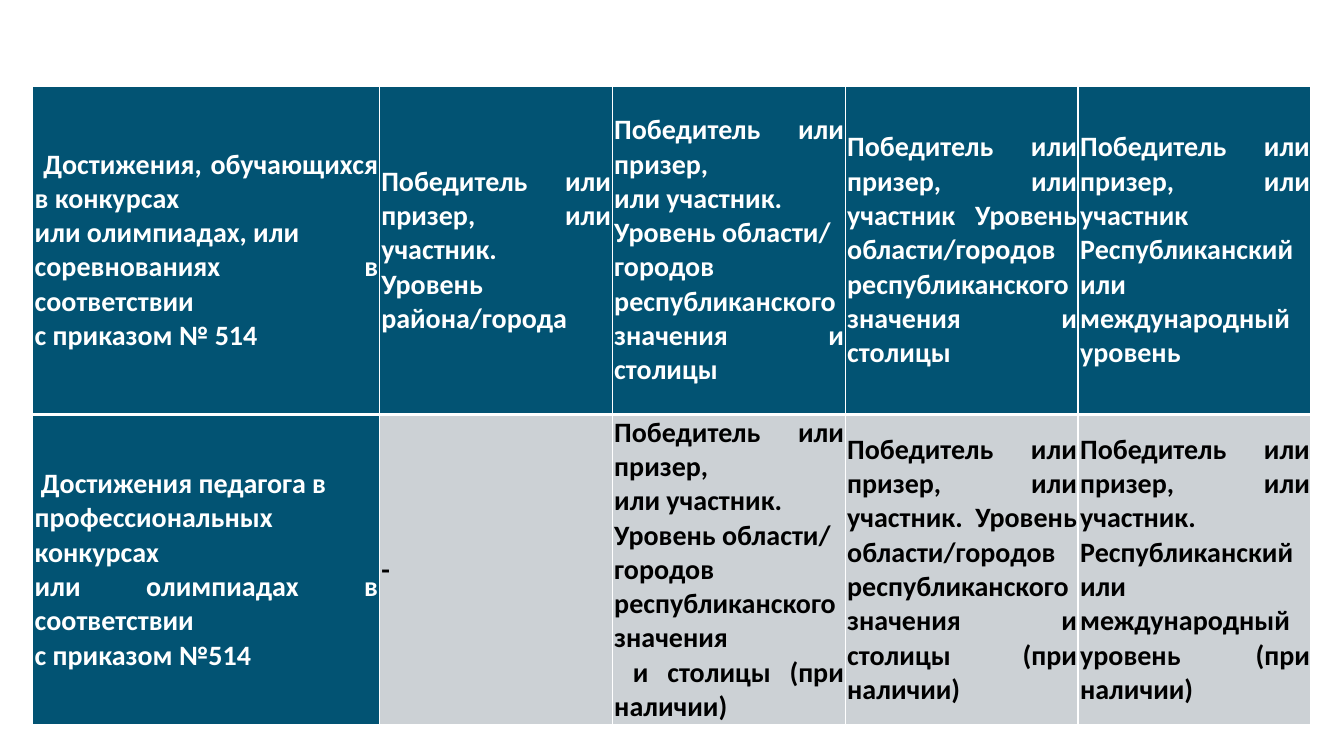
from lxml.etree import SubElement
from pptx import Presentation
from pptx.dml.color import RGBColor
from pptx.enum.text import MSO_ANCHOR, PP_ALIGN
from pptx.oxml.ns import qn
from pptx.util import Pt

WHITE, BLACK, TEAL, GREY = "FFFFFF", "000000", "025373", "CCD1D5"

# Rows of cells; each cell is a list of paragraphs
ROWS = [
    [
        [" Достижения, обучающихся в конкурсах ", "или олимпиадах, или ",
         "соревнованиях в соответствии ", "с приказом № 514"],
        ["Победитель или призер, или участник. ", "Уровень района/города"],
        ["Победитель или призер, ", "или участник. ", "Уровень области/",
         "городов ", "республиканского значения и столицы"],
        ["Победитель или призер, или участник Уровень области/городов "
         "республиканского значения и столицы"],
        ["Победитель или призер, или участник Республиканский или "
         "международный уровень"],
    ],
    [
        [" Достижения педагога в ", "профессиональных конкурсах ",
         "или олимпиадах в соответствии ", "с приказом №514"],
        ["-"],
        ["Победитель или призер, ", "или участник. ", "Уровень области/",
         "городов ", "республиканского значения", " и столицы (при наличии)"],
        ["Победитель или призер, или участник. Уровень области/городов "
         "республиканского значения и столицы (при наличии)"],
        ["Победитель или призер, или участник. Республиканский или "
         "международный уровень (при наличии)"],
    ],
]
LEFT, TOP = 23.3, 61.4
COL_WIDTHS = [247.6] + [166.4] * 4
ROW_HEIGHTS = [234.6, 218.9]
INSET = 0.75


def rgb(color):
    return RGBColor.from_string(color)


def set_borders(cell, widths):
    """Draw white left, right, top and bottom borders of the given widths."""
    tc_pr = cell._tc.get_or_add_tcPr()
    for side, width in zip("LRTB", widths):
        ln = SubElement(tc_pr, qn(f"a:ln{side}"), w=str(Pt(width)))
        SubElement(SubElement(ln, qn("a:solidFill")), qn("a:srgbClr"), val=WHITE)


def fill_cell(cell, paragraphs, fill, color):
    cell.fill.solid()
    cell.fill.fore_color.rgb = rgb(fill)
    cell.vertical_anchor = MSO_ANCHOR.MIDDLE
    cell.margin_left = cell.margin_right = Pt(INSET)
    cell.margin_top = cell.margin_bottom = Pt(INSET)
    tf = cell.text_frame
    for i, text in enumerate(paragraphs):
        p = tf.paragraphs[0] if i == 0 else tf.add_paragraph()
        p.text = text
        p.alignment = PP_ALIGN.JUSTIFY
        p._p.get_or_add_pPr().set("marL", str(Pt(INSET)))
        p.font.name, p.font.size, p.font.bold = "Calibri", Pt(20), True
        p.font.color.rgb = rgb(color)


def main():
    prs = Presentation()
    prs.slide_width, prs.slide_height = Pt(960), Pt(540)
    s = prs.slides.add_slide(prs.slide_layouts[6])
    table = s.shapes.add_table(
        len(ROWS), len(COL_WIDTHS), Pt(LEFT), Pt(TOP),
        Pt(sum(COL_WIDTHS)), Pt(sum(ROW_HEIGHTS))).table
    for column, width in zip(table.columns, COL_WIDTHS):
        column.width = Pt(width)
    for row, height in zip(table.rows, ROW_HEIGHTS):
        row.height = Pt(height)

    for r, row in enumerate(ROWS):
        for c, paragraphs in enumerate(row):
            cell = table.cell(r, c)
            set_borders(cell, (1, 1, 1, 3) if r == 0 else (1, 1, 3, 1))
            fill = TEAL if r == 0 or c == 0 else GREY
            fill_cell(cell, paragraphs, fill, WHITE if fill == TEAL else BLACK)
    prs.save("out.pptx")


if __name__ == "__main__":
    main()
